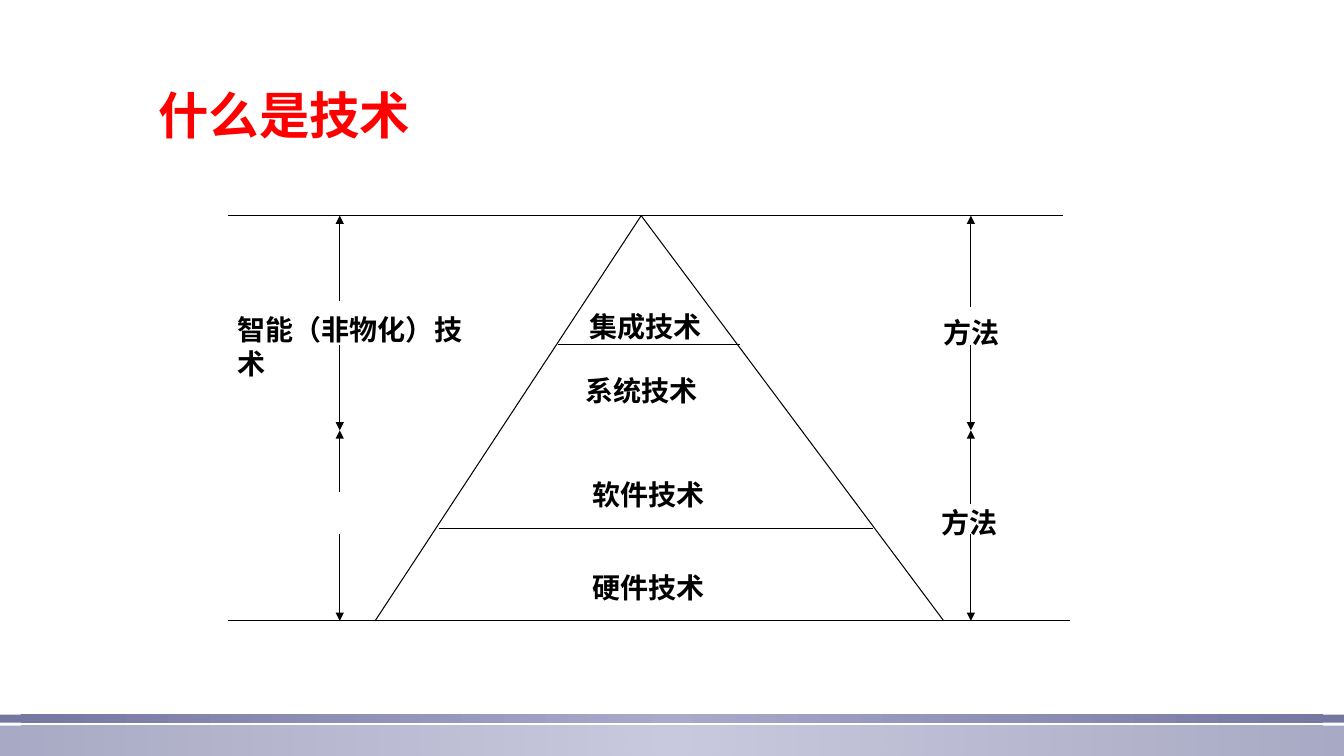
from dataclasses import dataclass

import lxml.etree
import pptx
import pptx.dml.color
import pptx.enum.shapes
import pptx.enum.text
import pptx.oxml
import pptx.oxml.ns
import pptx.util

SLIDE_WIDTH = pptx.util.Inches(13.33)
SLIDE_HEIGHT = pptx.util.Inches(7.5)
COLORS = {
    "title": "FF0000",
    "ink": "000000",
    "paper": "FFFFFF",
    "bar_center": "9394BE",
    "bar_edge": "53548A",
}
TITLE_FONT = "Noto Sans CJK SC"
LABEL_FONT = "Arial"
ALIGN = pptx.enum.text.PP_ALIGN
NAMESPACE = pptx.oxml.ns.nsdecls("a")

# All lengths are percentages of the slide's width or height.
APEX_X, LEFT_FOOT_X, RIGHT_FOOT_X = 47.71, 27.91, 70.22
LEFT_EDGE = 16.95
TOP, MIDDLE, BASE = 28.53, 56.93, 82.13
LABEL_HEIGHT = 4.53


@dataclass(frozen=True)
class Line:
    x1: float
    y1: float
    x2: float
    y2: float
    arrow: bool = False


@dataclass(frozen=True)
class Label:
    text: str
    left: float
    top: float
    width: float
    align: ALIGN = ALIGN.CENTER


@dataclass(frozen=True)
class Bar:
    top: float
    height: float
    opacity: int


@dataclass(frozen=True)
class ArrowColumn:
    """Four arrows reaching the top, middle and base from two gaps."""

    x: float
    upper_gap: tuple[float, float]
    lower_gap: tuple[float, float]

    def lines(self) -> list[Line]:
        starts = (*self.upper_gap, *self.lower_gap)
        tips = (TOP, MIDDLE, MIDDLE, BASE)
        return [Line(self.x, start, self.x, tip, True) for start, tip in zip(starts, tips)]


BARS = [Bar(96, 4, 50), Bar(94.53, 1.07, 80)]
PYRAMID = [
    Line(LEFT_EDGE, BASE, 79.59, BASE),
    Line(LEFT_FOOT_X, BASE, APEX_X, TOP),
    Line(APEX_X, TOP, RIGHT_FOOT_X, BASE),
    Line(LEFT_EDGE, TOP, 79.07, TOP),
    Line(32.63, 69.87, 64.97, 69.87),
    Line(41.49, 45.6, 55.06, 45.6),
]
ARROW_COLUMNS = [
    ArrowColumn(25.28, (39.87, 45.6), (65.07, 70.67)),
    ArrowColumn(72.24, (40.67, 45.6), (66.67, 70.67)),
]
LABELS = [
    Label("智能（非物化）技术", LEFT_EDGE, 40.67, 18.75, ALIGN.LEFT),
    Label("方法", 67.59, 41.07, 9.38),
    Label("方法", 65.79, 66.27, 12.75),
    Label("集成技术", 43.06, 40.27, 9.9),
    Label("系统技术", 42.01, 48.8, 11.48),
    Label("软件技术", 38.86, 62.53, 18.75),
    Label("硬件技术", 41.49, 74.8, 13.58),
]


def across(percent: float) -> int:
    return round(SLIDE_WIDTH * percent / 100)


def down(percent: float) -> int:
    return round(SLIDE_HEIGHT * percent / 100)


def rgb(name: str) -> pptx.dml.color.RGBColor:
    return pptx.dml.color.RGBColor.from_string(COLORS[name])


def add_run(paragraph, text: str, font_name: str, size: float, color: str):
    run = paragraph.add_run()
    run.text = text
    run.font.name = font_name
    run.font.size = pptx.util.Pt(size)
    run.font.bold = True
    run.font.color.rgb = rgb(color)
    properties = run._r.get_or_add_rPr()
    east_asian = lxml.etree.SubElement(properties, pptx.oxml.ns.qn("a:ea"))
    east_asian.set("typeface", font_name)
    return run


def add_bar(slide, bar: Bar) -> None:
    """Draw a full-width bar that is lighter at its centre."""
    shape = slide.shapes.add_shape(
        pptx.enum.shapes.MSO_SHAPE.RECTANGLE,
        0, down(bar.top), SLIDE_WIDTH, down(bar.height),
    )
    shape.shadow.inherit = False
    shape.line.fill.background()
    stops = "".join(
        f'<a:gs pos="{position}"><a:srgbClr val="{COLORS[color]}">'
        f'<a:alpha val="{bar.opacity * 1000}"/></a:srgbClr></a:gs>'
        for position, color in ((0, "bar_center"), (100000, "bar_edge"))
    )
    gradient = pptx.oxml.parse_xml(
        f"<a:gradFill {NAMESPACE}><a:gsLst>{stops}</a:gsLst>"
        '<a:path path="circle"><a:fillToRect l="50000" t="50000" r="50000" b="50000"/>'
        "</a:path></a:gradFill>"
    )
    shape._element.spPr.find(pptx.oxml.ns.qn("a:prstGeom")).addnext(gradient)


def add_line(slide, line: Line) -> None:
    connector = slide.shapes.add_connector(
        pptx.enum.shapes.MSO_CONNECTOR.STRAIGHT,
        across(line.x1), down(line.y1), across(line.x2), down(line.y2),
    )
    connector.line.color.rgb = rgb("ink")
    connector.line.width = pptx.util.Pt(0.75)
    if line.arrow:
        outline = connector.line._get_or_add_ln()
        outline.append(pptx.oxml.parse_xml(f'<a:tailEnd {NAMESPACE} type="triangle"/>'))
    connector._element.spPr.append(pptx.oxml.parse_xml(f"<a:effectLst {NAMESPACE}/>"))


def add_label(slide, label: Label) -> None:
    box = slide.shapes.add_textbox(
        across(label.left), down(label.top), across(label.width), down(LABEL_HEIGHT)
    )
    frame = box.text_frame
    frame.word_wrap = True
    frame.auto_size = pptx.enum.text.MSO_AUTO_SIZE.SHAPE_TO_FIT_TEXT
    paragraph = frame.paragraphs[0]
    paragraph.alignment = label.align
    add_run(paragraph, label.text, LABEL_FONT, 20, "ink")


def fill_title(slide, text: str) -> None:
    title = slide.shapes.title
    title.left, title.top = across(11.03), down(3.33)
    title.width, title.height = across(84.85), down(16.53)
    frame = title.text_frame
    frame.auto_size = pptx.enum.text.MSO_AUTO_SIZE.NONE
    frame.vertical_anchor = pptx.enum.text.MSO_ANCHOR.BOTTOM
    paragraph = frame.paragraphs[0]
    paragraph.alignment = ALIGN.LEFT
    paragraph.line_spacing = 0.9
    run = add_run(paragraph, text, TITLE_FONT, 36, "title")
    outline = pptx.oxml.parse_xml(
        f'<a:ln {NAMESPACE} w="{pptx.util.Pt(0.75)}"><a:solidFill>'
        f'<a:srgbClr val="{COLORS["paper"]}"/></a:solidFill></a:ln>'
    )
    run._r.get_or_add_rPr().insert(0, outline)


def main() -> None:
    presentation = pptx.Presentation()
    presentation.slide_width = SLIDE_WIDTH
    presentation.slide_height = SLIDE_HEIGHT
    slide = presentation.slides.add_slide(presentation.slide_layouts[5])
    fill_title(slide, "什么是技术")
    for bar in BARS:
        add_bar(slide, bar)
    for line in PYRAMID:
        add_line(slide, line)
    for column in ARROW_COLUMNS:
        for line in column.lines():
            add_line(slide, line)
    for label in LABELS:
        add_label(slide, label)
    presentation.save("out.pptx")


if __name__ == "__main__":
    main()
